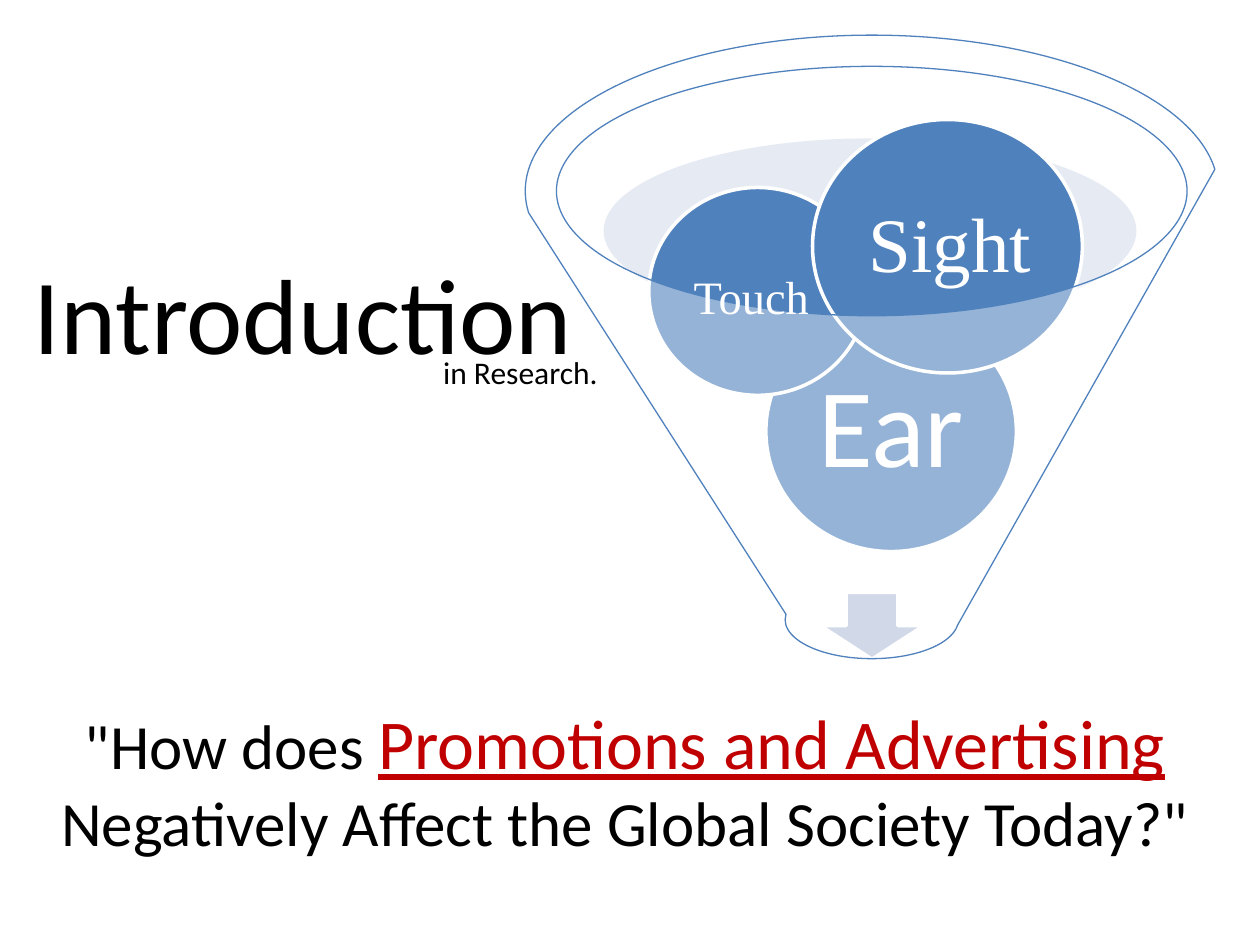
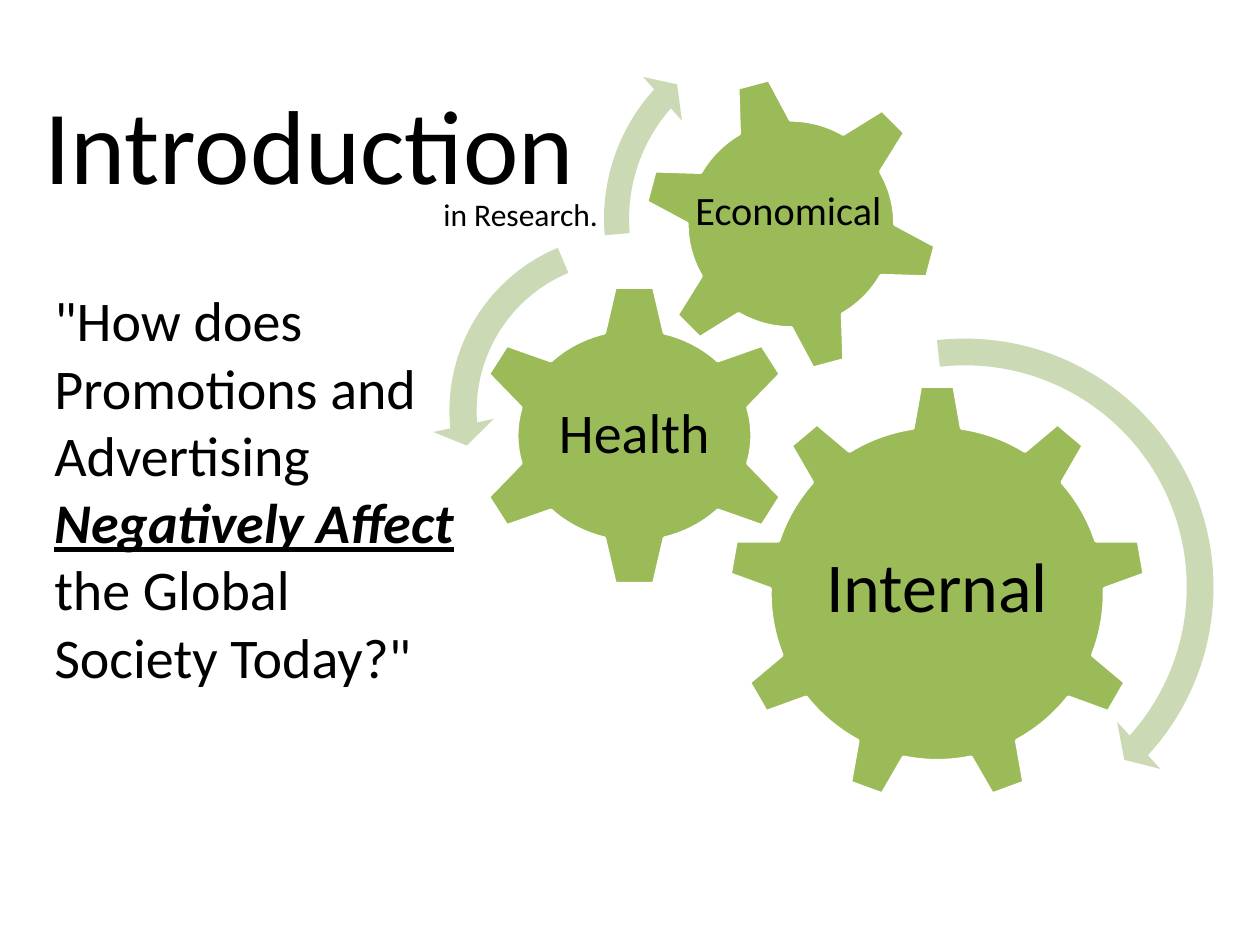
from dataclasses import dataclass

from lxml import etree
from pptx import Presentation
from pptx.dml.color import RGBColor
from pptx.enum import shapes, text
from pptx.oxml.ns import qn
from pptx.util import Cm, Pt

S = shapes.MSO_SHAPE
LEFT, CENTER, RIGHT = text.PP_ALIGN.LEFT, text.PP_ALIGN.CENTER, text.PP_ALIGN.RIGHT


@dataclass(frozen=True)
class Theme:
    font: str = "Calibri"
    serif: str = "Times New Roman"
    black: str = "000000"
    white: str = "FFFFFF"
    red: str = "C00000"
    blue: str = "4F81BD"
    rim: str = "C2CDE1"
    arrow: str = "B3C1DB"
    green: str = "9BBB59"
    pale_green: str = "CBDAB5"
    small: float = 18
    label: float = 32
    question: float = 36
    large: float = 40
    sense: float = 64
    outline: float = 2
    thin: float = 0.75


T = Theme()
WHITE_EDGE = (T.white, T.outline)

# Boxes are (left, top, width, height) in cm; a run is (words, format values).
SENSES = {
    "question": dict(
        box=(0, 13.13, 25.2, 5.18), align=CENTER, inset=0.76,
        runs=[('"How does ', dict(size=T.question)),
              ("Promotions and Advertising ",
               dict(size=T.large, underline=True, color=T.red)),
              ('Negatively Affect the Global Society Today?"',
               dict(size=T.question))]),
    "parts": [
        dict(kind=S.OVAL, box=(12.17, 2.79, 10.74, 3.73), fill=T.rim, opacity=40),
        dict(kind=S.DOWN_ARROW, box=(16.54, 11.94, 2.08, 1.35), fill=T.arrow,
             line=WHITE_EDGE),
        dict(kind=S.OVAL, box=(15.44, 6.27, 5.05, 4.85), fill=T.blue, line=WHITE_EDGE,
             label=("Ear", dict(size=T.sense, color=T.white))),
        dict(kind=S.OVAL, box=(13.08, 3.78, 4.39, 4.19), fill=T.blue, line=WHITE_EDGE),
        dict(kind=S.OVAL, box=(16.38, 2.41, 5.44, 5.11), fill=T.blue, line=WHITE_EDGE),
        dict(kind=S.FUNNEL, box=(10.59, 0.71, 13.97, 12.57), fill=T.white, opacity=40,
             line=(T.blue, T.thin)),
    ],
    "texts": [
        ("Sight", (16.08, 3.81, 6.15, 2.13), CENTER,
         dict(size=44, name=T.serif, color=T.white)),
        ("Touch", (12.07, 5.28, 6.15, 1.4), CENTER,
         dict(size=26.5, name=T.serif, color=T.white)),
        ("Introduction", (0.43, 4.88, 12.27, 2.87), LEFT, dict(size=61)),
        ("in Research.", (3.61, 6.99, 8.69, 1.02), RIGHT, dict(size=T.small)),
    ],
}

EFFECTS = {
    "question": dict(
        box=(0.84, 3.38, 8.69, 12.9), align=LEFT,
        runs=[('"How does Promotions and Advertising ', dict(size=T.label)),
              ("Negatively Affect ",
               dict(size=T.label, bold=True, italic=True, underline=True)),
              ('the Global Society Today?"', dict(size=T.label))]),
    "parts": [
        dict(kind=S.GEAR_9, box=(14.68, 7.75, 8.43, 8.43), fill=T.green,
             line=WHITE_EDGE, label=("Internal", dict(size=T.large))),
        dict(kind=S.GEAR_6, box=(9.5, 5.72, 6.58, 6.12), fill=T.green,
             line=WHITE_EDGE, label=("Health", dict(size=T.label))),
        dict(kind=S.GEAR_6, box=(12.95, 1.52, 5.99, 5.99), fill=T.green,
             line=WHITE_EDGE, rotation=345),
        dict(kind=S.CIRCULAR_ARROW, box=(14.07, 6.45, 10.77, 10.77),
             fill=T.pale_green, adjust=(0.05, 2.99, 25.41, 158.1, 0.06)),
        dict(kind=S.LEFT_CIRCULAR_ARROW, box=(8.71, 4.37, 7.82, 7.82),
             fill=T.pale_green, adjust=(0.07, 4.3, 104.89, 148.38, 0.08)),
        dict(kind=S.CIRCULAR_ARROW, box=(11.84, 0.2, 8.43, 8.43),
             fill=T.pale_green, adjust=(0.06, 3.94, 133.14, 105.08, 0.07)),
    ],
    "texts": [
        ("Introduction", (0.64, 1.47, 12.07, 2.82), LEFT, dict(size=60)),
        ("in Research.", (8.69, 3.81, 5.72, 1.02), LEFT, dict(size=T.small)),
        ("Economical", (13.77, 3.61, 4.47, 1.27), LEFT, dict(size=23)),
    ],
}


def rgb(color):
    return RGBColor.from_string(color)


def write(tf, runs, align, **frame):
    """Fill a text frame with one paragraph of formatted runs."""
    for key, value in (dict(word_wrap=True, auto_size=text.MSO_AUTO_SIZE.NONE) | frame).items():
        setattr(tf, key, value)
    p = tf.paragraphs[0]
    p.alignment = align
    for words, style in runs:
        r = p.add_run()
        r.text = words
        values = dict(name=T.font, color=T.black) | style
        r.font.color.rgb = rgb(values.pop("color"))
        values["size"] = Pt(values["size"])
        for key, value in values.items():
            setattr(r.font, key, value)


def add_question(s, box, align, runs, inset=None):
    sp = s.shapes.title
    sp.left, sp.top, sp.width, sp.height = map(Cm, box)
    frame = dict(vertical_anchor=text.MSO_ANCHOR.MIDDLE)
    if inset:
        frame |= {f"margin_{side}": Cm(inset) for side in ("left", "top", "right", "bottom")}
    write(sp.text_frame, runs, align, **frame)


def add_part(s, kind, box, fill, line=None, opacity=None, label=None, rotation=0, adjust=()):
    sp = s.shapes.add_shape(kind, *map(Cm, box))
    sp.shadow.inherit = False
    sp.rotation = rotation
    for i, value in enumerate(adjust):
        sp.adjustments[i] = value
    sp.fill.solid()
    sp.fill.fore_color.rgb = rgb(fill)
    if opacity:
        color = sp.fill._xPr.find(".//" + qn("a:srgbClr"))
        etree.SubElement(color, qn("a:alpha"), val=str(opacity * 1000))
    if line:
        sp.line.color.rgb = rgb(line[0])
        sp.line.width = Pt(line[1])
    else:
        sp.line.fill.background()
    if label:
        write(sp.text_frame, [label], CENTER, word_wrap=False,
              vertical_anchor=text.MSO_ANCHOR.MIDDLE)
        sp.text_frame.paragraphs[0].line_spacing = 0.9


def add_text(s, words, box, align, style):
    write(s.shapes.add_textbox(*map(Cm, box)).text_frame, [(words, style)], align)


def main():
    prs = Presentation()
    prs.slide_width, prs.slide_height = Cm(25.4), Cm(19.05)
    for content in (SENSES, EFFECTS):
        s = prs.slides.add_slide(prs.slide_layouts.get_by_name("Title Only"))
        add_question(s, **content["question"])
        for part in content["parts"]:
            add_part(s, **part)
        for item in content["texts"]:
            add_text(s, *item)
    prs.save("out.pptx")


if __name__ == "__main__":
    main()
